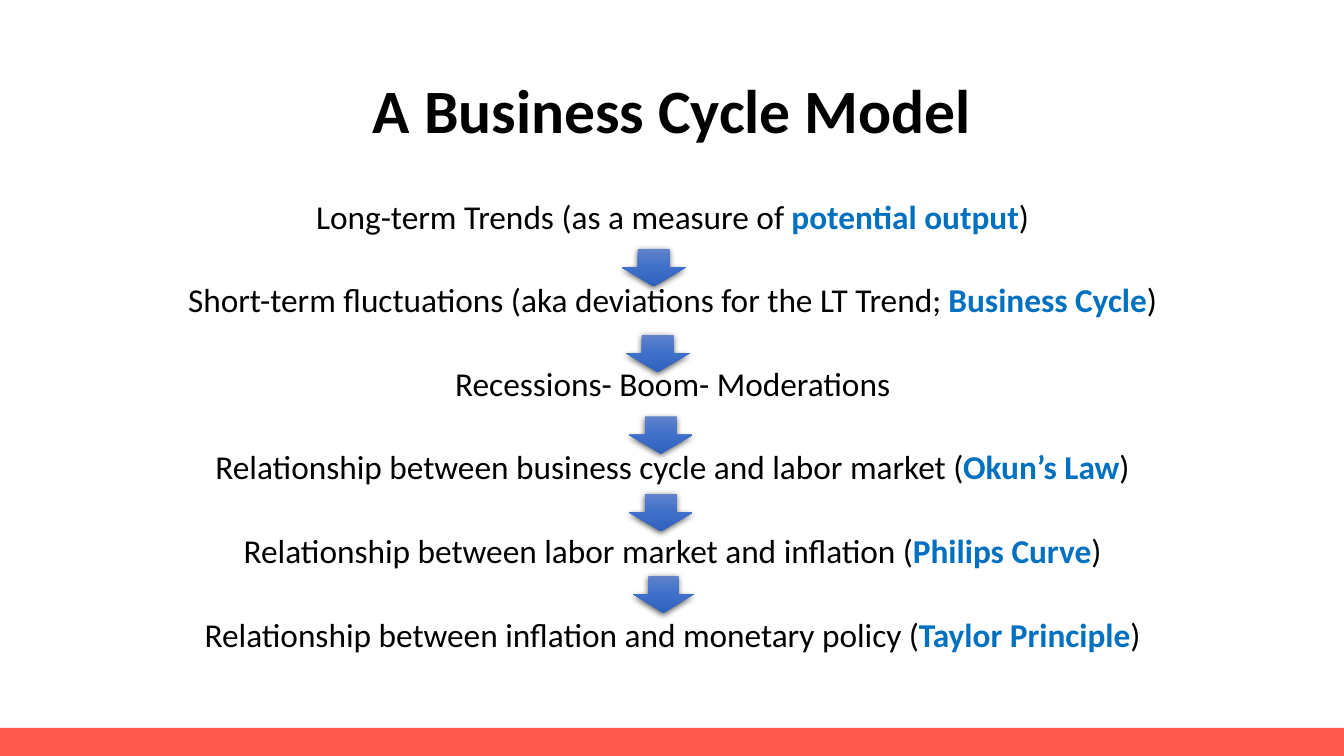
"""Build the business cycle model slide."""
from lxml import etree
from pptx import Presentation
from pptx.dml.color import RGBColor
from pptx.enum.shapes import MSO_SHAPE as SHAPE
from pptx.enum.text import MSO_ANCHOR as ANCHOR, MSO_AUTO_SIZE as AUTO, PP_ALIGN as ALIGN
from pptx.oxml import parse_xml
from pptx.oxml.ns import nsdecls, qn
from pptx.util import Inches, Pt

WIDTH, HEIGHT = 13.33, 7.5
TITLE = "A Business Cycle Model"
STEPS = [
    ("Long-term Trends (as a measure of ", "potential output", ")"),
    ("Short-term fluctuations (aka deviations for the LT Trend; ", "Business Cycle", ")"),
    ("Recessions- Boom- Moderations",),
    ("Relationship between business cycle and labor market (", "Okun’s Law", ")"),
    ("Relationship between labor market and inflation (", "Philips Curve", ")"),
    ("Relationship between inflation and monetary policy (", "Taylor Principle", ")"),
]
ARROWS = [(6.17, 2.47, 0.63), (6.21, 3.32, 0.63), (6.24, 4.13, 0.63),
          (6.24, 4.9, 0.63), (6.28, 5.71, 0.6)]
ARROW_HEIGHT = 0.37
GRADIENT = [(0, "6183CB"), (50, "3E70CA"), (100, "3062BB")]
BLACK, BLUE, CORAL = "000000", "0070C0", "FF5A50"


def color(value):
    """Turn a hex string into a colour."""
    return RGBColor.from_string(value)


def place(sp, left, top, width, height):
    """Position a shape, in inches."""
    sp.left, sp.top, sp.width, sp.height = map(Inches, (left, top, width, height))


def add_text(p, text, size, bold=False, fill=BLACK):
    """Append a formatted run to a paragraph."""
    r = p.add_run()
    r.text = text
    r.font.name, r.font.size, r.font.bold = "Calibri", Pt(size), bold
    r.font.color.rgb = color(fill)


def add_arrow(slide, left, top, width):
    """Draw a down arrow with a gradient and a soft shadow."""
    sp = slide.shapes.add_shape(SHAPE.DOWN_ARROW, *map(Inches, (left, top, width, ARROW_HEIGHT)))
    sp.line.fill.background()
    stops = "".join(f'<a:gs pos="{pos * 1000}"><a:srgbClr val="{c}"/></a:gs>' for pos, c in GRADIENT)
    sp.line._ln.addprevious(parse_xml(
        f'<a:gradFill {nsdecls("a")} rotWithShape="1"><a:gsLst>{stops}</a:gsLst>'
        '<a:lin ang="5400000" scaled="0"/></a:gradFill>'))
    sp.line._ln.addnext(parse_xml(
        f'<a:effectLst {nsdecls("a")}><a:outerShdw blurRad="{Pt(4.5)}" dist="{Pt(1.5)}" '
        'dir="5400000" algn="ctr" rotWithShape="0"><a:srgbClr val="000000">'
        '<a:alpha val="63000"/></a:srgbClr></a:outerShdw></a:effectLst>'))


def main():
    """Assemble and save the slide."""
    prs = Presentation()
    prs.slide_width, prs.slide_height = Inches(WIDTH), Inches(HEIGHT)
    slide = prs.slides.add_slide(prs.slide_layouts[1])
    title, body = slide.placeholders

    band = slide.shapes.add_shape(SHAPE.RECTANGLE, 0, Inches(7.22), Inches(WIDTH), Inches(0.28))
    band.shadow.inherit = False
    band.fill.solid()
    band.fill.fore_color.rgb = color(CORAL)
    band.line.fill.background()

    place(title, 0.92, 0.4, 11.5, 1.45)
    place(body, 0.92, 2, 11.5, 4.76)
    for sp, anchor in ((title, ANCHOR.MIDDLE), (body, ANCHOR.TOP)):
        tf = sp.text_frame
        tf.word_wrap, tf.auto_size, tf.vertical_anchor = True, AUTO.NONE, anchor

    p = title.text_frame.paragraphs[0]
    p.alignment, p.line_spacing = ALIGN.CENTER, 0.9
    add_text(p, TITLE, 44, bold=True)

    tf = body.text_frame
    for i, parts in enumerate(STEPS):
        p = tf.add_paragraph() if i else tf.paragraphs[0]
        pPr = p._p.get_or_add_pPr()
        pPr.set("marL", "0")
        pPr.set("indent", "0")
        etree.SubElement(pPr, qn("a:buNone"))
        p.alignment, p.line_spacing = ALIGN.CENTER, 0.7
        p.space_before = Pt(39.7 if i else 0)
        for j, text in enumerate(parts):
            key = j == 1
            add_text(p, text, 23.8, bold=key, fill=BLUE if key else BLACK)

    for arrow in ARROWS:
        add_arrow(slide, *arrow)
    prs.save("out.pptx")


if __name__ == "__main__":
    main()
